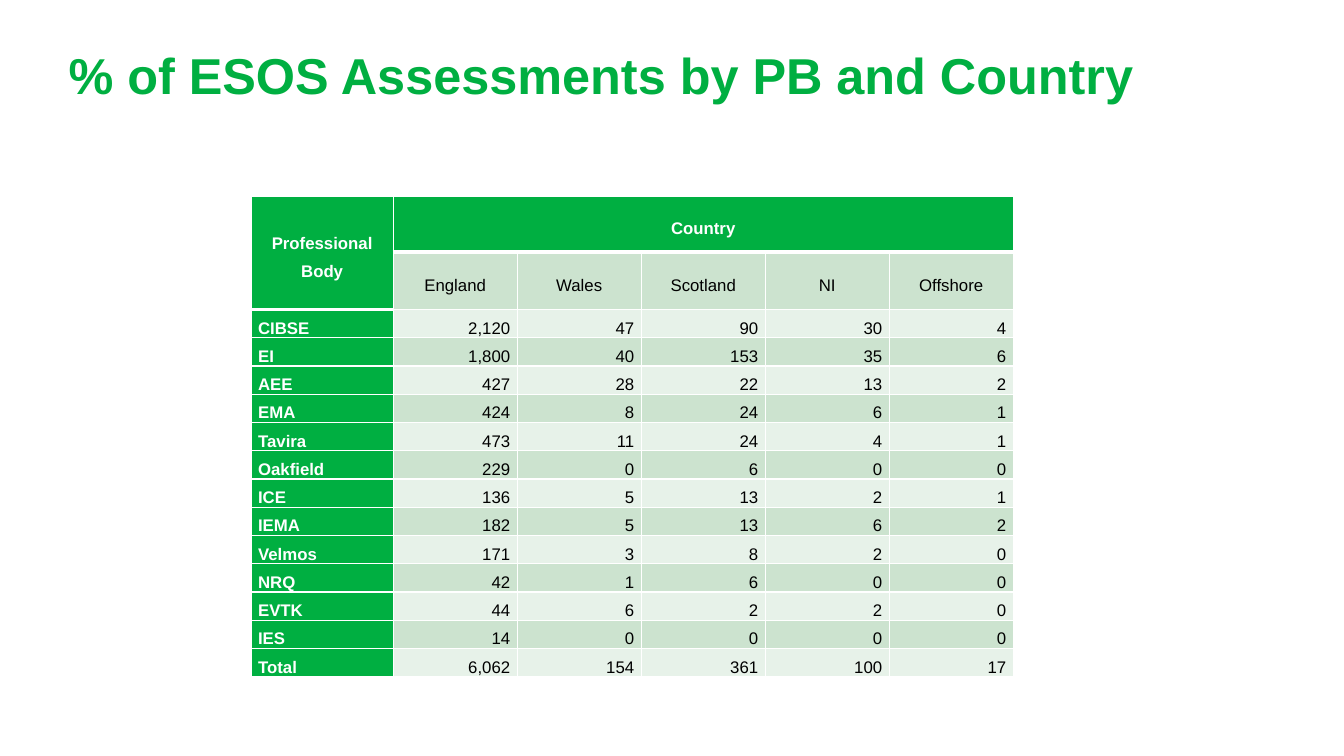
from pptx import Presentation
from pptx.dml.color import RGBColor
from pptx.enum.text import MSO_ANCHOR, PP_ALIGN
from pptx.oxml.ns import qn
from pptx.util import Inches, Pt
from lxml.etree import SubElement

TITLE = "% of ESOS Assessments by PB and Country"
BODY_HEADING = "Professional Body"
COUNTRY_HEADING = "Country"
COUNTRIES = ["England", "Wales", "Scotland", "NI", "Offshore"]
ASSESSMENTS = [
    ("CIBSE", 2120, 47, 90, 30, 4),
    ("EI", 1800, 40, 153, 35, 6),
    ("AEE", 427, 28, 22, 13, 2),
    ("EMA", 424, 8, 24, 6, 1),
    ("Tavira", 473, 11, 24, 4, 1),
    ("Oakfield", 229, 0, 6, 0, 0),
    ("ICE", 136, 5, 13, 2, 1),
    ("IEMA", 182, 5, 13, 6, 2),
    ("Velmos", 171, 3, 8, 2, 0),
    ("NRQ", 42, 1, 6, 0, 0),
    ("EVTK", 44, 6, 2, 2, 0),
    ("IES", 14, 0, 0, 0, 0),
    ("Total", 6062, 154, 361, 100, 17),
]

THEME = {
    "font": "Arial",
    "title_size": Pt(36),
    "cell_size": Pt(12),
    "green": RGBColor.from_string("00AF41"),
    "bands": [RGBColor.from_string("CCE3CF"), RGBColor.from_string("E7F2E9")],
    "white": RGBColor.from_string("FFFFFF"),
    "black": RGBColor.from_string("000000"),
}

TABLE_LEFT, TABLE_TOP = 2.49, 1.95
COL_WIDTHS = [1.41] + [1.23] * len(COUNTRIES)
ROW_HEIGHTS = [0.55, 0.57] + [0.28] * len(ASSESSMENTS)


def style_paragraph(p, size, color, bold, spacing, align=PP_ALIGN.LEFT):
    p.alignment = align
    p.line_spacing = spacing
    p.font.name = THEME["font"]
    p.font.size = size
    p.font.bold = bold
    p.font.color.rgb = color


def set_borders(cell, bottom):
    tcPr = cell._tc.get_or_add_tcPr()
    widths = {"a:lnL": 1, "a:lnR": 1, "a:lnT": 1, "a:lnB": bottom}
    for i, (tag, width) in enumerate(widths.items()):
        ln = SubElement(tcPr, qn(tag), w=str(Pt(width)))
        fill = SubElement(ln, qn("a:solidFill"))
        SubElement(fill, qn("a:srgbClr"), val=str(THEME["white"]))
        tcPr.remove(ln)
        tcPr.insert(i, ln)


def style_cell(cell, text, row, col):
    heading = row == 0 or col == 0
    cell.fill.solid()
    cell.fill.fore_color.rgb = THEME["green"] if heading else THEME["bands"][(row + 1) % 2]
    cell.margin_left = cell.margin_right = Inches(0.07)
    cell.margin_top = cell.margin_bottom = 0
    cell.vertical_anchor = MSO_ANCHOR.MIDDLE if row < 2 else MSO_ANCHOR.BOTTOM
    cell.text = text
    if row < 2:
        align = PP_ALIGN.CENTER
    else:
        align = PP_ALIGN.RIGHT if col else PP_ALIGN.LEFT
    color = THEME["white"] if heading else THEME["black"]
    style_paragraph(cell.text_frame.paragraphs[0], THEME["cell_size"], color, heading, 1.5, align)
    set_borders(cell, 3 if row == 0 or (row, col) == (1, 0) else 1)


def add_title(slide):
    tf = slide.shapes.add_textbox(Inches(0.68), Inches(0.51), Inches(11.97), Inches(1.04)).text_frame
    tf.word_wrap = True
    tf.margin_left = tf.margin_right = tf.margin_top = tf.margin_bottom = 0
    p = tf.paragraphs[0]
    p.text = TITLE
    style_paragraph(p, THEME["title_size"], THEME["green"], True, 0.9)


def add_assessments_table(slide):
    rows = [
        [BODY_HEADING, COUNTRY_HEADING] + [""] * (len(COUNTRIES) - 1),
        [""] + COUNTRIES,
    ] + [[body] + [f"{n:,}" for n in counts] for body, *counts in ASSESSMENTS]
    table = slide.shapes.add_table(
        len(rows), len(COL_WIDTHS), Inches(TABLE_LEFT), Inches(TABLE_TOP),
        Inches(sum(COL_WIDTHS)), Inches(sum(ROW_HEIGHTS)),
    ).table
    for column, width in zip(table.columns, COL_WIDTHS):
        column.width = Inches(width)
    for row, height in zip(table.rows, ROW_HEIGHTS):
        row.height = Inches(height)
    for i, texts in enumerate(rows):
        for j, text in enumerate(texts):
            style_cell(table.cell(i, j), text, i, j)
    table.cell(0, 0).merge(table.cell(1, 0))
    table.cell(0, 1).merge(table.cell(0, len(COUNTRIES)))


def main():
    prs = Presentation()
    prs.slide_width, prs.slide_height = Inches(13.33), Inches(7.5)
    slide = prs.slides.add_slide(prs.slide_layouts[6])
    add_assessments_table(slide)
    add_title(slide)
    prs.save("out.pptx")


if __name__ == "__main__":
    main()
